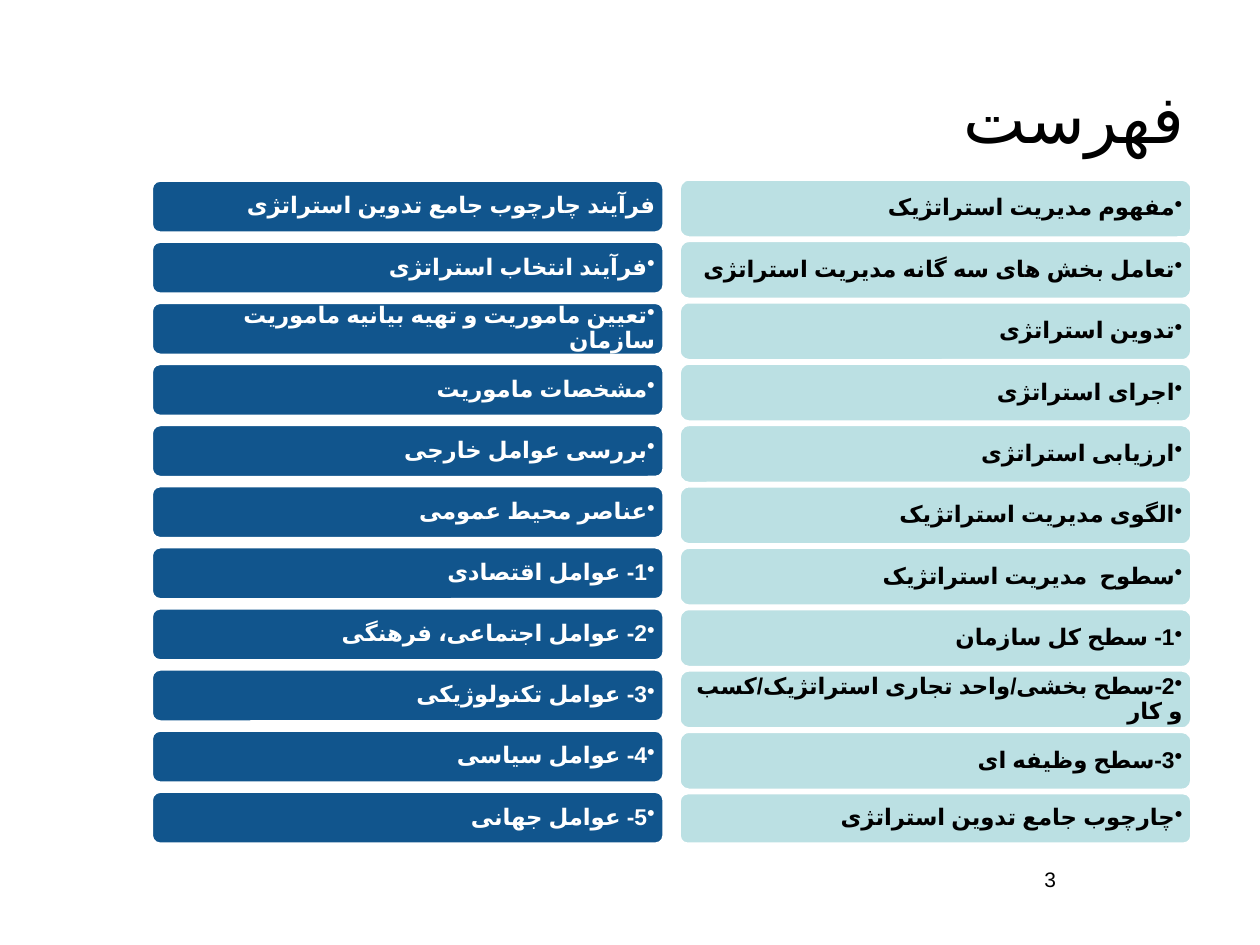
from lxml.etree import SubElement
from pptx import Presentation
from pptx.dml.color import RGBColor
from pptx.enum.lang import MSO_LANGUAGE_ID as LANG
from pptx.enum.shapes import MSO_SHAPE as SHAPE
from pptx.enum.text import MSO_ANCHOR as ANCHOR, PP_ALIGN as ALIGN
from pptx.oxml.ns import qn
from pptx.util import Cm, Pt

BLACK = RGBColor(0x00, 0x00, 0x00)
WHITE = RGBColor(0xFF, 0xFF, 0xFF)
PALE_TEAL = RGBColor(0xBB, 0xE0, 0xE3)
DEEP_BLUE = RGBColor(0x11, 0x55, 0x8D)

BOX_WIDTH = 10.34  # cm

# Topics of each column, from top to bottom
STRATEGY_TOPICS = [
    "مفهوم مدیریت استراتژیک",
    "تعامل بخش های سه گانه مدیریت استراتژی",
    "تدوین استراتژی",
    "اجرای استراتژی",
    "ارزیابی استراتژی",
    "الگوی مدیریت استراتژیک",
    "سطوح  مدیریت استراتژیک",
    "1- سطح کل سازمان",
    "2-سطح بخشی/واحد تجاری استراتژیک/کسب و کار",
    "3-سطح وظیفه ای",
    "چارچوب جامع تدوین استراتژی",
]
PROCESS_TOPICS = [
    "فرآیند چارچوب جامع تدوین استراتژی",
    "فرآیند انتخاب استراتژی",
    "تعیین ماموریت و تهیه بیانیه ماموریت سازمان",
    "مشخصات ماموریت",
    "بررسی عوامل خارجی",
    "عناصر محیط عمومی",
    "1- عوامل اقتصادی",
    "2- عوامل اجتماعی، فرهنگی",
    "3- عوامل تکنولوژیکی",
    "4- عوامل سیاسی",
    "5- عوامل جهانی",
]


def write_rtl(tf, text, size, color, font="Calibri", align=ALIGN.RIGHT, bold=False):
    """Fill a text frame with one right-to-left Persian paragraph."""
    tf.text = text
    tf.word_wrap = True
    p = tf.paragraphs[0]
    p.alignment = align
    p._p.get_or_add_pPr().set("rtl", "1")
    r = p.runs[0]
    r.font.size = Pt(size)
    r.font.bold = bold
    r.font.name = font
    r.font.color.rgb = color
    r.font.language_id = LANG.FARSI
    SubElement(r._r.get_or_add_rPr(), qn("a:cs")).set("typeface", "Arial")
    return p


def add_bullet(p):
    pPr = p._p.get_or_add_pPr()
    pPr.set("marL", "0")
    pPr.set("indent", "0")
    SubElement(pPr, qn("a:buFont")).set("typeface", "OpenSymbol")
    SubElement(pPr, qn("a:buChar")).set("char", "•")


def add_topic(slide, text, left, top, height, fill, color, bullet):
    sp = slide.shapes.add_shape(
        SHAPE.ROUNDED_RECTANGLE, Cm(left), Cm(top), Cm(BOX_WIDTH), Cm(height))
    sp.shadow.inherit = False
    sp.fill.solid()
    sp.fill.fore_color.rgb = fill
    sp.line.color.rgb = WHITE
    sp.line.width = Pt(2)
    tf = sp.text_frame
    tf.vertical_anchor = ANCHOR.MIDDLE
    tf.margin_left = tf.margin_right = Cm(0.13)
    tf.margin_top = tf.margin_bottom = Cm(0.13)
    p = write_rtl(tf, text, 13, color, bold=True)
    p.line_spacing = 0.9
    if bullet:
        add_bullet(p)


def add_column(slide, topics, left, first_top, last_top, heights, fill, color,
               plain_first=False):
    """Stack topic boxes at an equal pitch between the first and last top."""
    pitch = (last_top - first_top) / (len(topics) - 1)
    for i, (text, height) in enumerate(zip(topics, heights)):
        bullet = i > 0 or not plain_first
        add_topic(slide, text, left, first_top + i * pitch, height, fill, color, bullet)


def add_title(slide, text):
    title = slide.shapes.title
    title.left, title.top = Cm(1.27), Cm(0.76)
    title.width, title.height = Cm(22.86), Cm(3.18)
    title.text_frame.vertical_anchor = ANCHOR.MIDDLE
    write_rtl(title.text_frame, text, 38, BLACK, font="Arial")


def add_page_number(slide, number):
    box = slide.shapes.add_textbox(Cm(18.21), Cm(17.35), Cm(5.92), Cm(1.32))
    write_rtl(box.text_frame, number, 12, BLACK, align=ALIGN.CENTER)


def main():
    prs = Presentation()
    prs.slide_width, prs.slide_height = Cm(25.4), Cm(19.05)
    slide = prs.slides.add_slide(prs.slide_layouts[5])

    add_title(slide, "فهرست")
    add_page_number(slide, "3")

    # Right column, its last box a little shorter than the rest
    add_column(slide, STRATEGY_TOPICS, 13.69, 3.61, 15.98,
               [1.19] * 10 + [1.04], PALE_TEAL, BLACK)
    # Left column, headed by a topic without a bullet
    add_column(slide, PROCESS_TOPICS, 3.05, 3.63, 15.95,
               [1.07] * 11, DEEP_BLUE, WHITE, plain_first=True)

    prs.save("out.pptx")


if __name__ == "__main__":
    main()
